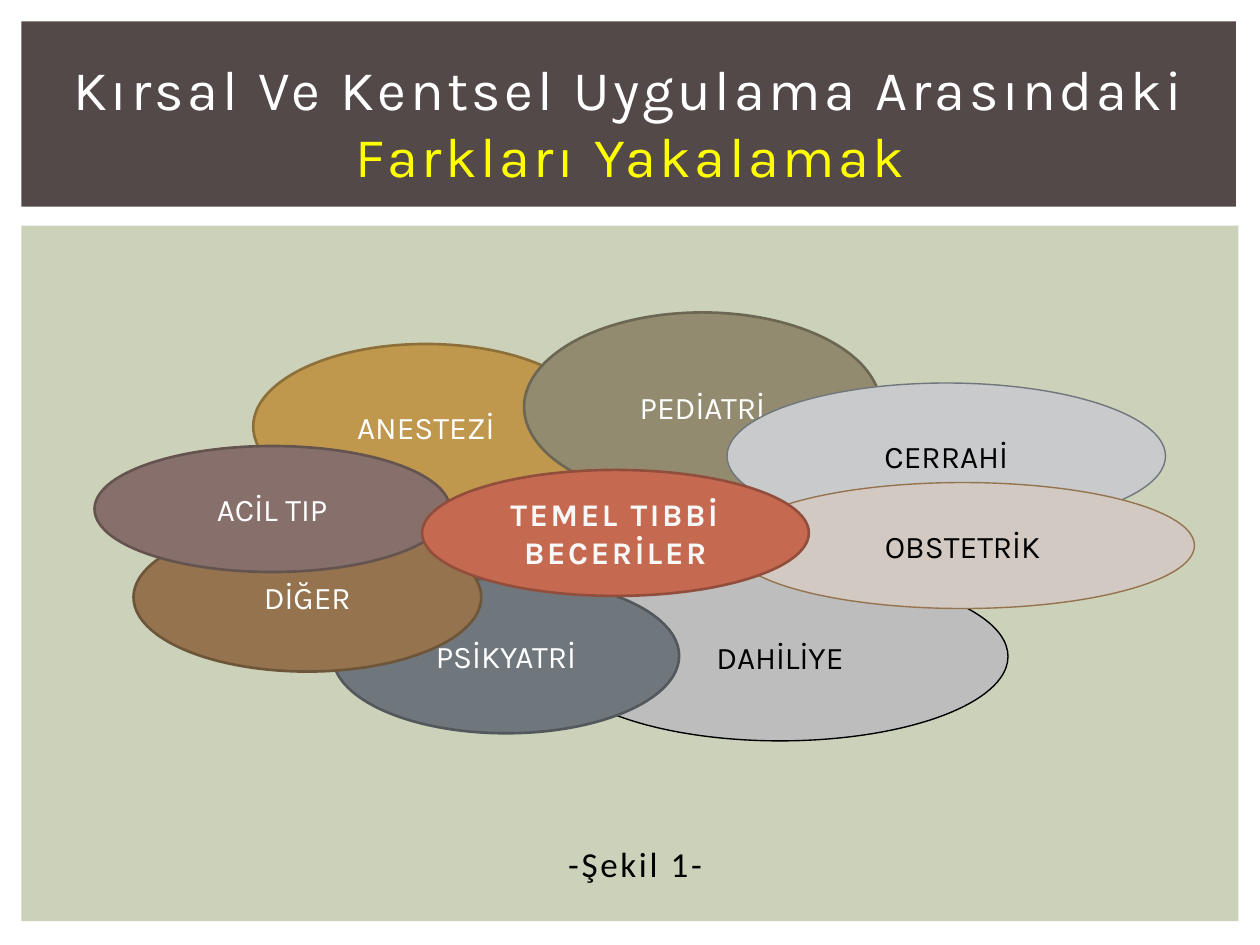
from dataclasses import dataclass

from pptx import Presentation
from pptx.dml.color import RGBColor
from pptx.enum.shapes import MSO_SHAPE
from pptx.enum.text import MSO_ANCHOR, MSO_AUTO_SIZE, PP_ALIGN
from pptx.oxml.ns import qn
from pptx.util import Inches, Pt
from lxml.etree import SubElement


@dataclass(frozen=True)
class Theme:
    heading: str = "Karla"
    plain: str = "Calibri"
    title_size: int = 32
    caption_size: int = 20
    label_size: int = 18
    thick: float = 1.5
    thin: float = 0.79
    white: str = "FFFFFF"
    black: str = "000000"
    accent: str = "FFFF00"
    core_text: str = "F8F8F8"
    header: str = "534949"
    panel: str = "CCD1B9"


THEME = Theme()
COLUMNS, ROWS = 100, 75
WIDTH, HEIGHT = Inches(10), Inches(7.5)

BANDS = [
    ((1.7, 17.9, 96.6, 55.2), THEME.panel),
    ((1.7, 1.7, 96.4, 14.7), THEME.header),
]
TITLE_AT = (4.2, 3.9, 91.7, 11.5)
TITLE = [
    ("Kırsal Ve Kentsel Uygulama Arasındaki ", THEME.white),
    ("Farkları Yakalamak", THEME.accent),
]
CAPTION_AT = (22.3, 65.1, 57.7, 6.3)
CAPTION_INDENT = 22.8
CAPTION = "-Şekil 1-"

DARK_FIELDS = [
    ("ANESTEZİ", (20.1, 27.3, 27.4, 13.1), "BF974D", "8D7039"),
    ("PEDİATRİ", (41.6, 24.8, 28.3, 15), "928B70", "6C6753"),
]
LOWER_LIGHT_FIELDS = [
    ("DAHİLİYE", (43.8, 45.4, 36.2, 13.4), "BDBDBD", "000000"),
]
LOWER_DARK_FIELDS = [
    ("PSİKYATRİ", (26.4, 45.9, 27.5, 12.3), "6F777D", "52585C"),
    ("DİĞER", (10.6, 41.5, 27.6, 11.8), "94734E", "6D553A"),
    ("ACİL TIP", (7.5, 35.4, 28.2, 10), "87706B", "64534F"),
]
RIGHT_LIGHT_FIELDS = [
    ("CERRAHİ", (57.7, 30.4, 34.8, 11.6), "C8CACC", "6F777D"),
    ("OBSTETRİK", (58, 38.3, 36.8, 10), "D2C9C2", "94734E"),
]
CORE = [("TEMEL TIBBİ BECERİLER", (33.5, 37.3, 30.7, 10), "C66951", "924E3C")]

LAYERS = [
    (DARK_FIELDS, THEME.white, THEME.thick, {}),
    (LOWER_LIGHT_FIELDS, THEME.black, THEME.thin, {}),
    (LOWER_DARK_FIELDS, THEME.white, THEME.thick, {}),
    (RIGHT_LIGHT_FIELDS, THEME.black, THEME.thin, {}),
    (CORE, THEME.core_text, THEME.thick, {"bold": True, "spacing": 1.5}),
]


def place(at):
    left, top, width, height = at
    return (
        round(left * WIDTH / COLUMNS),
        round(top * HEIGHT / ROWS),
        round(width * WIDTH / COLUMNS),
        round(height * HEIGHT / ROWS),
    )


def move(box, at):
    box.left, box.top, box.width, box.height = place(at)


def add_figure(page, preset, at, fill):
    shape = page.shapes.add_shape(preset, *place(at))
    shape.shadow.inherit = False
    shape.fill.solid()
    shape.fill.fore_color.rgb = RGBColor.from_string(fill)
    shape.line.fill.background()
    return shape


def prepare(box, align):
    frame = box.text_frame
    frame.word_wrap = True
    frame.auto_size = MSO_AUTO_SIZE.NONE
    frame.vertical_anchor = MSO_ANCHOR.MIDDLE
    para = frame.paragraphs[0]
    para.alignment = align
    para.space_before = Pt(0)
    return para


def add_span(para, text, size, color, font=THEME.heading, bold=False, spacing=0):
    span = para.add_run()
    span.text = text
    span.font.name = font
    span.font.size = Pt(size)
    span.font.bold = bold
    span.font.color.rgb = RGBColor.from_string(color)
    if spacing:
        span.font._element.set("spc", str(round(spacing * 100)))


def add_title(page):
    box = page.shapes.title
    move(box, TITLE_AT)
    para = prepare(box, PP_ALIGN.CENTER)
    for text, color in TITLE:
        add_span(para, text, THEME.title_size, color, spacing=2)


def add_caption(page):
    box = page.placeholders[1]
    move(box, CAPTION_AT)
    para = prepare(box, PP_ALIGN.LEFT)
    box.text_frame.margin_left = round(CAPTION_INDENT * WIDTH / COLUMNS)
    box.text_frame.margin_top = Inches(0.1)
    properties = para._p.get_or_add_pPr()
    properties.set("marL", "0")
    properties.set("indent", "0")
    SubElement(properties, qn("a:buNone"))
    add_span(para, CAPTION, THEME.caption_size, THEME.black, THEME.plain, spacing=1.5)


def main():
    """Build the slide of overlapping medical fields around core skills."""
    deck = Presentation()
    deck.slide_width, deck.slide_height = WIDTH, HEIGHT
    page = deck.slides.add_slide(deck.slide_layouts[1])
    for at, fill in BANDS:
        band = add_figure(page, MSO_SHAPE.RECTANGLE, at, fill)
        page.shapes.title.element.addprevious(band.element)
    add_title(page)
    add_caption(page)
    for fields, color, weight, style in LAYERS:
        for label, at, fill, outline in fields:
            oval = add_figure(page, MSO_SHAPE.OVAL, at, fill)
            oval.line.color.rgb = RGBColor.from_string(outline)
            oval.line.width = Pt(weight)
            para = prepare(oval, PP_ALIGN.CENTER)
            add_span(para, label, THEME.label_size, color, **style)
    deck.save("out.pptx")


if __name__ == "__main__":
    main()
